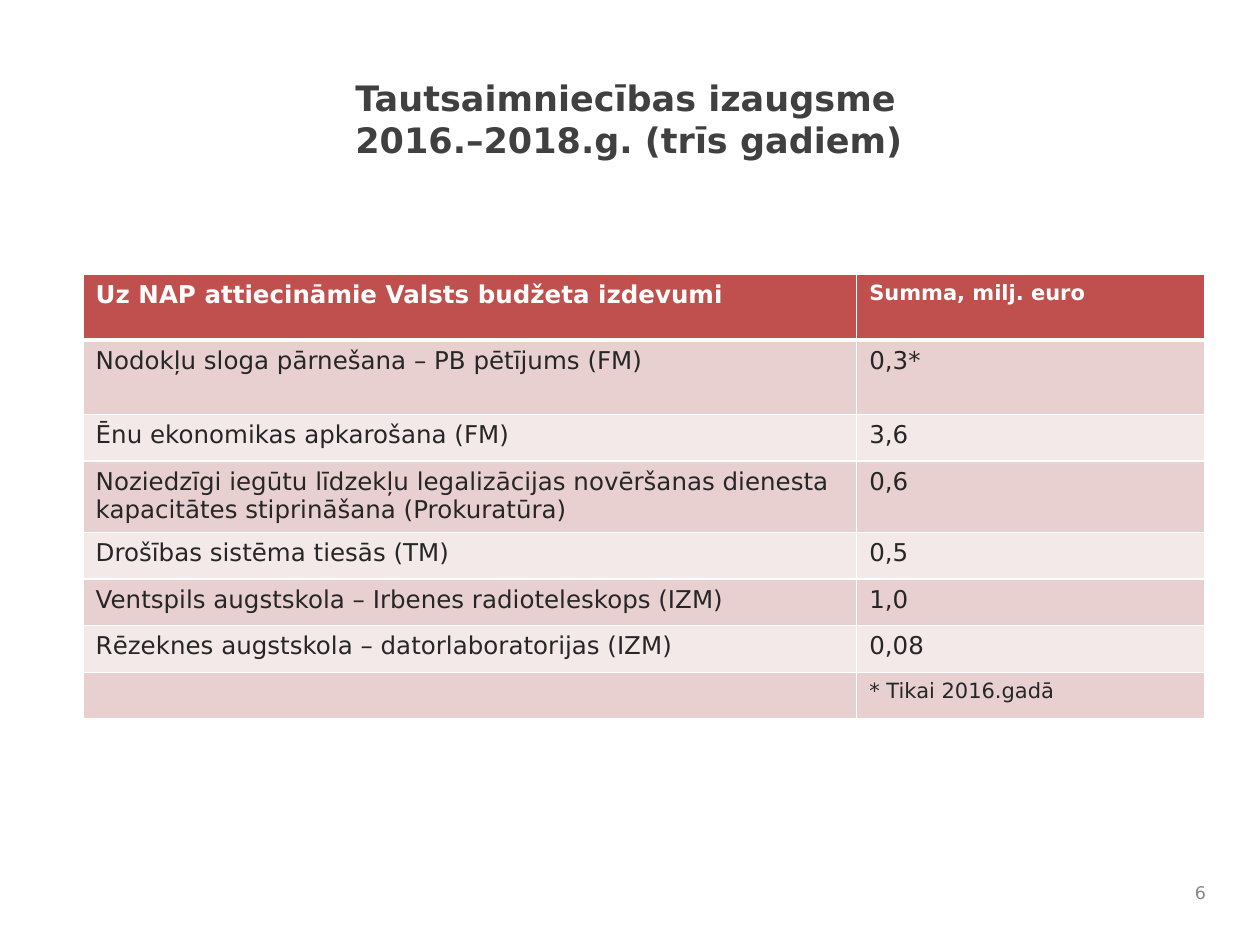
from lxml import etree
from pptx import Presentation
from pptx import util as u
from pptx.dml.color import RGBColor
from pptx.enum import text
from pptx.oxml.ns import qn

FONT = "DejaVu Sans"
WHITE = RGBColor(0xFF, 0xFF, 0xFF)
TITLE_GREY = RGBColor(0x40, 0x40, 0x40)
BODY_GREY = RGBColor(0x26, 0x26, 0x26)
NUMBER_GREY = RGBColor(0x89, 0x89, 0x89)
HEADER_RED = RGBColor(0xC0, 0x50, 0x4D)
BANDS = (RGBColor(0xE8, 0xD0, 0xD0), RGBColor(0xF4, 0xE9, 0xE9))

HEADER = ("Uz NAP attiecināmie Valsts budžeta izdevumi", "Summa, milj. euro")
EXPENSES = (
    ("Nodokļu sloga pārnešana – PB pētījums (FM)", "0,3*"),
    ("Ēnu ekonomikas apkarošana (FM)", "3,6"),
    ("Noziedzīgi iegūtu līdzekļu legalizācijas novēršanas dienesta "
     "kapacitātes stiprināšana (Prokuratūra)", "0,6"),
    ("Drošības sistēma tiesās (TM)", "0,5"),
    ("Ventspils augstskola – Irbenes radioteleskops (IZM)", "1,0"),
    ("Rēzeknes augstskola – datorlaboratorijas (IZM)", "0,08"),
    ("", "* Tikai 2016.gadā"),
)
SMALL_TEXTS = (HEADER[1], EXPENSES[-1][1])
COLUMN_WIDTHS = (6.14, 2.76)
ROW_HEIGHTS = (0.52, 0.59, 0.37, 0.55, 0.37, 0.37, 0.37, 0.37)


def format_runs(paragraph, size, color, bold=False):
    """Apply one font to every run of a paragraph."""
    for run in paragraph.runs:
        run.font.name = FONT
        run.font.size = u.Pt(size)
        run.font.bold = bold
        run.font.color.rgb = color


def place(shape, box):
    """Move a shape to a box of left, top, width and height in inches."""
    shape.left, shape.top, shape.width, shape.height = map(u.Inches, box)


def add_title(slide, box):
    """Fill and format the title placeholder."""
    title = slide.shapes.title
    place(title, box)
    frame = title.text_frame
    frame.text = "Tautsaimniecības izaugsme\v2016.–2018.g. (trīs gadiem)"
    frame.word_wrap = True
    frame.auto_size = text.MSO_AUTO_SIZE.NONE
    frame.vertical_anchor = text.MSO_ANCHOR.TOP
    frame.paragraphs[0].alignment = text.PP_ALIGN.LEFT
    format_runs(frame.paragraphs[0], 20, TITLE_GREY, True)


def set_borders(cell, bottom):
    """Give a cell white borders, with the bottom one in its own width."""
    properties = cell._tc.get_or_add_tcPr()
    for side, width in (("L", 1), ("R", 1), ("T", 1), ("B", bottom)):
        line = etree.SubElement(properties, qn(f"a:ln{side}"), w=str(u.Pt(width)))
        fill = etree.SubElement(line, qn("a:solidFill"))
        etree.SubElement(fill, qn("a:srgbClr"), val=str(WHITE))


def fill_cell(cell, wording, is_header, fill):
    """Write and format one table cell."""
    set_borders(cell, 3 if is_header else 1)
    cell.fill.solid()
    cell.fill.fore_color.rgb = fill
    paragraph = cell.text_frame.paragraphs[0]
    size = 12 if wording in SMALL_TEXTS else 14
    if wording:
        paragraph.text = wording
        format_runs(paragraph, size, WHITE if is_header else BODY_GREY, is_header)
    else:
        etree.SubElement(paragraph._p, qn("a:endParaRPr"), sz=str(size * 100))


def add_expense_table(slide, box):
    """Add the table of budget expenses."""
    rows = (HEADER, *EXPENSES)
    table = slide.shapes.add_table(len(rows), len(HEADER), *map(u.Inches, box)).table
    for column, width in zip(table.columns, COLUMN_WIDTHS):
        column.width = u.Inches(width)
    for row, height in zip(table.rows, ROW_HEIGHTS):
        row.height = u.Inches(height)
    for index, wordings in enumerate(rows):
        fill = BANDS[(index - 1) % 2] if index else HEADER_RED
        for cell, wording in zip(table.rows[index].cells, wordings):
            fill_cell(cell, wording, index == 0, fill)


def add_slide_number(slide, box):
    """Add the slide number."""
    frame = slide.shapes.add_textbox(*map(u.Inches, box)).text_frame
    frame.text = "6"
    frame.word_wrap = True
    frame.vertical_anchor = text.MSO_ANCHOR.MIDDLE
    frame.paragraphs[0].alignment = text.PP_ALIGN.RIGHT
    format_runs(frame.paragraphs[0], 10, NUMBER_GREY)


def main():
    """Build and save the presentation."""
    presentation = Presentation()
    presentation.slide_width = u.Inches(10)
    presentation.slide_height = u.Inches(7.5)
    slide = presentation.slides.add_slide(presentation.slide_layouts[5])
    add_slide_number(slide, (9.24, 6.92, 0.43, 0.33))
    add_title(slide, (2.72, 0.56, 6.67, 1.13))
    add_expense_table(slide, (0.66, 2.18, sum(COLUMN_WIDTHS), sum(ROW_HEIGHTS)))
    presentation.save("out.pptx")


if __name__ == "__main__":
    main()
